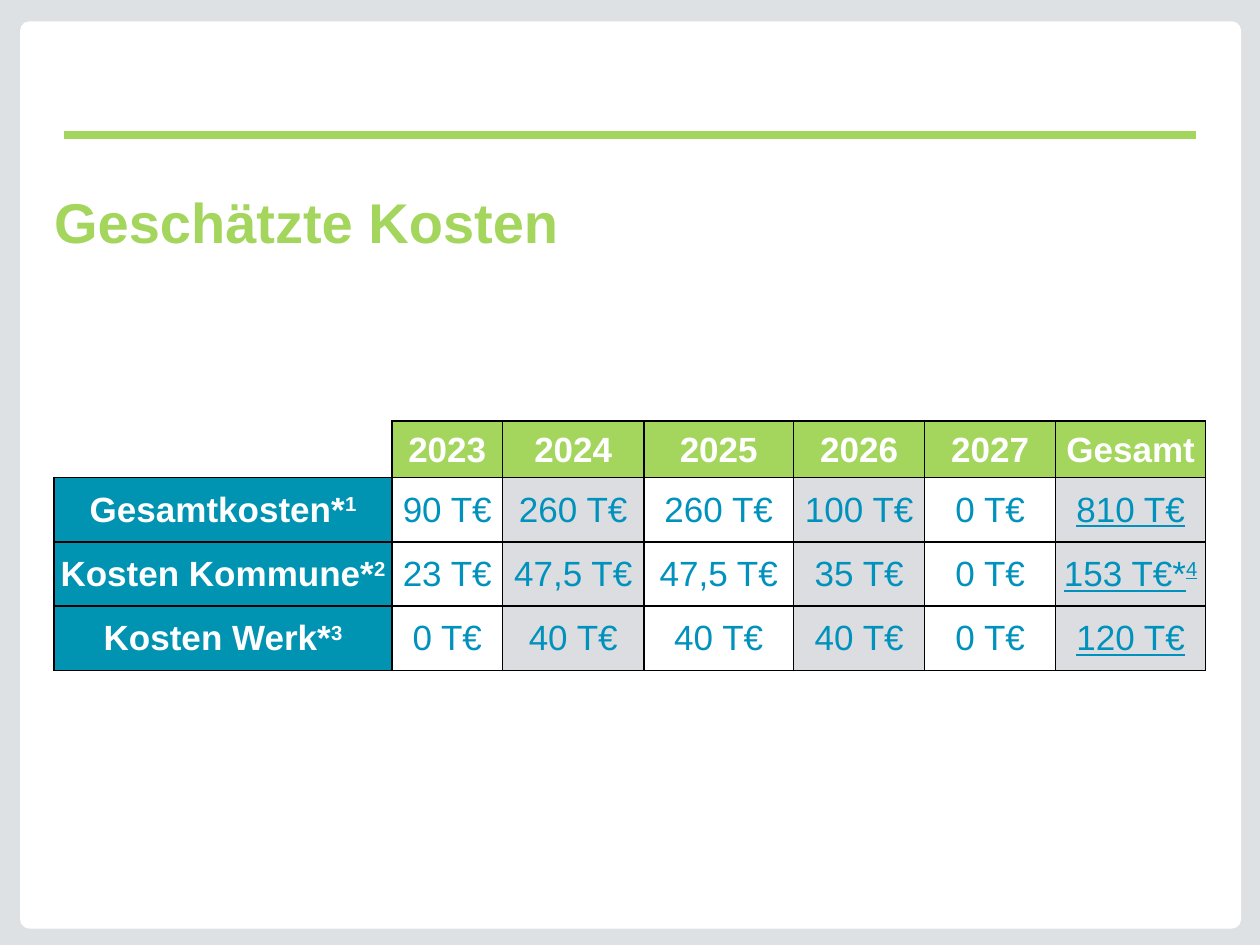
from lxml.etree import SubElement
from pptx import Presentation
from pptx.dml.color import RGBColor
from pptx.enum.shapes import MSO_CONNECTOR, MSO_SHAPE
from pptx.enum.text import MSO_ANCHOR, PP_ALIGN
from pptx.oxml.ns import qn
from pptx.util import Inches, Pt

GREEN, TEAL, BLUE = "A4D65E", "0093B2", "0092BC"
WHITE, BLACK, GREY, FRAME = "FFFFFF", "000000", "DCDDE0", "DDE1E3"

COLUMN_WIDTHS = [2.68, 0.88, 1.12, 1.19, 1.04, 1.04, 1.19]
ROW_HEIGHTS = [0.45, 0.51, 0.51, 0.51]
# A digit after the asterisk is a raised footnote mark
COSTS = [
    ["", "2023", "2024", "2025", "2026", "2027", "Gesamt"],
    ["Gesamtkosten*1", "90 T€", "260 T€", "260 T€", "100 T€", "0 T€", "810 T€"],
    ["Kosten Kommune*2", "23 T€", "47,5 T€", "47,5 T€", "35 T€", "0 T€", "153 T€*4"],
    ["Kosten Werk*3", "0 T€", "40 T€", "40 T€", "40 T€", "0 T€", "120 T€"],
]


def color(hex_string):
    return RGBColor.from_string(hex_string)


def add_text(paragraph, text, size=20, fill=BLUE, bold=False, underline=False, raised=False):
    run = paragraph.add_run()
    run.text = text
    font = run.font
    font.name, font.size, font.bold = "Arial", Pt(size), bold
    font.color.rgb = color(fill)
    if underline:
        font.underline = True
    if raised:
        run._r.get_or_add_rPr().set("baseline", "30000")


def add_panel(slide, kind, box, fill):
    shape = slide.shapes.add_shape(kind, *map(Inches, box))
    shape.shadow.inherit = False
    shape.fill.solid()
    shape.fill.fore_color.rgb = color(fill)
    shape.line.fill.background()
    return shape


def add_background(slide, left, top, width, height):
    # Grey frame, white sheet and green rule
    add_panel(slide, MSO_SHAPE.RECTANGLE, (left, top, width, height), FRAME)
    sheet = add_panel(slide, MSO_SHAPE.ROUNDED_RECTANGLE,
                      (left + 0.16, top + 0.17, width - 0.31, height - 0.3), WHITE)
    sheet.adjustments[0] = 0.01
    rule = slide.shapes.add_connector(
        MSO_CONNECTOR.STRAIGHT, Inches(left + 0.51), Inches(top + 1.07),
        Inches(left + width - 0.51), Inches(top + 1.07))
    rule.line.color.rgb = color(GREEN)
    rule.line.width = Pt(4.5)
    SubElement(rule._element.spPr, qn("a:effectLst"))


def add_title(slide, left, top, width, height):
    box = slide.shapes.add_textbox(*map(Inches, (left, top, width, height)))
    frame = box.text_frame
    frame.word_wrap = True
    frame.vertical_anchor = MSO_ANCHOR.BOTTOM
    frame.margin_left = frame.margin_top = frame.margin_right = frame.margin_bottom = 0
    add_text(frame.paragraphs[0], "Geschätzte Kosten", size=32, fill=GREEN, bold=True)


def set_borders(cell, **sides):
    properties = cell._tc.get_or_add_tcPr()
    for side in "LRTB":
        line = SubElement(properties, qn(f"a:ln{side}"), w=str(Pt(1)))
        fill = SubElement(line, qn("a:solidFill"))
        SubElement(fill, qn("a:srgbClr"), val=sides.get(side, BLACK))


def cell_style(row, column):
    """Return the fill (None for no fill) and the text format of a cell."""
    if row == 0:
        return (GREEN if column else None), {"fill": WHITE, "bold": True}
    if column == 0:
        return TEAL, {"fill": WHITE, "bold": True}
    last = column == len(COLUMN_WIDTHS) - 1
    return (GREY if column % 2 == 0 else None), {"underline": last}


def format_cell(cell, row, column):
    fill, text_format = cell_style(row, column)
    cell.margin_left = cell.margin_top = cell.margin_right = Inches(0.01)
    cell.margin_bottom = 0
    cell.vertical_anchor = MSO_ANCHOR.MIDDLE
    corner = row == column == 0
    set_borders(cell, **({"L": WHITE, "T": WHITE} if corner else {}))
    if fill:
        cell.fill.solid()
        cell.fill.fore_color.rgb = color(fill)
    else:
        cell.fill.background()
    paragraph = cell.text_frame.paragraphs[0]
    paragraph.alignment = PP_ALIGN.CENTER
    label, star, mark = COSTS[row][column].partition("*")
    if label:
        add_text(paragraph, label + star, **text_format)
    if mark:
        add_text(paragraph, mark, raised=True, **text_format)


def add_cost_table(slide, left, top, width, height):
    table = slide.shapes.add_table(
        len(ROW_HEIGHTS), len(COLUMN_WIDTHS), *map(Inches, (left, top, width, height))).table
    table.first_row = table.horz_banding = False
    for column, column_width in zip(table.columns, COLUMN_WIDTHS):
        column.width = Inches(column_width)
    for row, row_height in zip(table.rows, ROW_HEIGHTS):
        row.height = Inches(row_height)
    for row in range(len(ROW_HEIGHTS)):
        for column in range(len(COLUMN_WIDTHS)):
            format_cell(table.cell(row, column), row, column)


def main():
    presentation = Presentation()
    presentation.slide_width, presentation.slide_height = Inches(10), Inches(7.5)
    slide = presentation.slides.add_slide(presentation.slide_layouts[6])
    add_background(slide, 0, 0, 10, 7.5)
    add_title(slide, 0.43, 1.47, 9.13, 0.55)
    add_cost_table(slide, 0.43, 3.34, sum(COLUMN_WIDTHS), sum(ROW_HEIGHTS))
    presentation.save("out.pptx")


if __name__ == "__main__":
    main()
